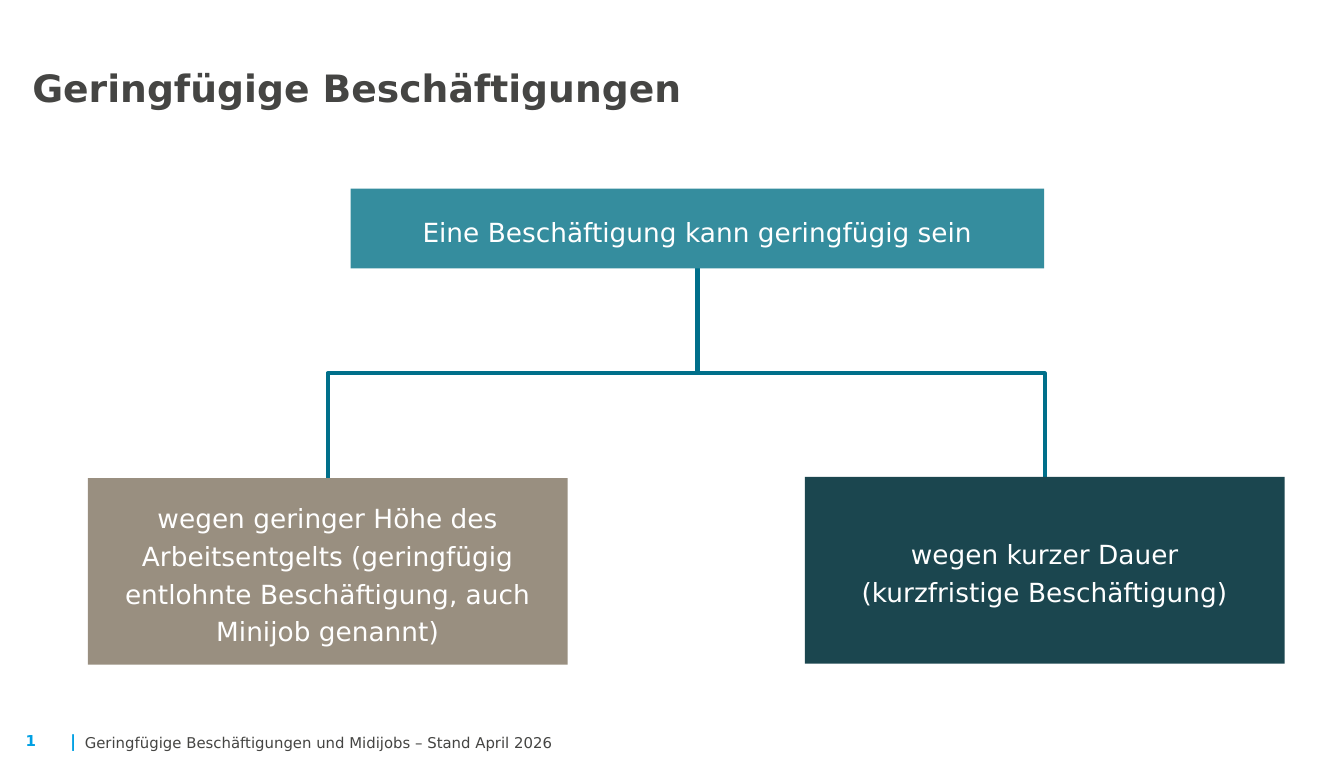
from lxml import etree
from pptx import Presentation
from pptx.dml.color import RGBColor
from pptx.enum.shapes import MSO_CONNECTOR, MSO_SHAPE
from pptx.enum.text import MSO_ANCHOR, MSO_AUTO_SIZE, PP_ALIGN
from pptx.oxml.ns import qn
from pptx.util import Pt

ELBOW, RECTANGLE = MSO_CONNECTOR.ELBOW, MSO_SHAPE.RECTANGLE
TOP, MIDDLE, BOTTOM = MSO_ANCHOR.TOP, MSO_ANCHOR.MIDDLE, MSO_ANCHOR.BOTTOM
LEFT, CENTER = PP_ALIGN.LEFT, PP_ALIGN.CENTER
NO_FIT = MSO_AUTO_SIZE.NONE

THEME = {
    "font": "DejaVu Sans",
    "text": "454543", "accent": "00A0E3", "white": "FFFFFF", "branch": "006F8A",
    "root": "358D9E", "pay": "998F80", "duration": "1B464F",
    "title_size": 20, "box_size": 14, "divider_size": 8.9,
    "page_size": 8, "footer_size": 7.9,
}

presentation = Presentation()
presentation.slide_width, presentation.slide_height = Pt(714.38), Pt(405)
slide = presentation.slides.add_slide(presentation.slide_layouts[5])


def area(left, top, width, height):
    """Turn percentages of the slide's size into lengths."""
    across, down = presentation.slide_width / 100, presentation.slide_height / 100
    return [round(share) for share in
            (left * across, top * down, width * across, height * down)]


def write(shape, text, size, color, bold=False, align=LEFT, spacing=None, **frame_format):
    frame = shape.text_frame
    frame.text = text
    for name, value in {"auto_size": NO_FIT, **frame_format}.items():
        setattr(frame, name, value)
    paragraph = frame.paragraphs[0]
    paragraph.alignment, paragraph.line_spacing = align, spacing
    for run in paragraph.runs:
        font = run.font
        font.name, font.size, font.bold = THEME["font"], Pt(THEME[size]), bold
        font.color.rgb = RGBColor.from_string(THEME[color])


FLUSH = dict.fromkeys(("margin_left", "margin_top", "margin_right", "margin_bottom"), 0)

# Title
title = slide.shapes.title
title.left, title.top, title.width, title.height = area(2.4, 8, 85.79, 12.62)
write(title, "Geringfügige Beschäftigungen", "title_size", "text", bold=True,
      spacing=Pt(24.8), vertical_anchor=TOP, word_wrap=True,
      **{**FLUSH, "margin_top": Pt(1.5)})

# Footer
footer_parts = [
    ((5.22, 95.9, 0.6, 2.67), "|", "divider_size", "accent",
     {"bold": True, "word_wrap": False, "vertical_anchor": BOTTOM, **FLUSH}),
    ((6.31, 95.9, 91.33, 2.67),
     "Geringfügige Beschäftigungen und Midijobs – Stand April 2026",
     "footer_size", "text",
     {"word_wrap": True, "vertical_anchor": BOTTOM, **FLUSH}),
    ((0.91, 95.11, 2.82, 4.27), "1", "page_size", "accent",
     {"bold": True, "word_wrap": False}),
]
for place, text, size, color, text_format in footer_parts:
    write(slide.shapes.add_textbox(*area(*place)), text, size, color, **text_format)

# Tree boxes: the root first, then its two branches
tree = [
    ("root", (26.1, 24.76, 51.6, 10.45), "Eine Beschäftigung kann geringfügig sein"),
    ("pay", (6.53, 62.75, 35.7, 24.5),
     "wegen geringer Höhe des Arbeitsentgelts (geringfügig entlohnte "
     "Beschäftigung, auch Minijob genannt)"),
    ("duration", (59.88, 62.6, 35.7, 24.5),
     "wegen kurzer Dauer\v(kurzfristige Beschäftigung)"),
]
boxes = []
for fill, place, text in tree:
    box = slide.shapes.add_shape(RECTANGLE, *area(*place))
    box.shadow.inherit = False
    box.fill.solid()
    box.fill.fore_color.rgb = RGBColor.from_string(THEME[fill])
    box.line.fill.background()
    write(box, text, "box_size", "white", align=CENTER, spacing=1.2,
          vertical_anchor=MIDDLE, word_wrap=True)
    boxes.append(box)

# Elbows behind the boxes share one crossbar; each is laid out sideways and turned
root, *branches = boxes
start_x, start_y = root.left + root.width // 2, root.top + root.height
end_y = max(branch.top for branch in branches)
middle_y, half_drop = (start_y + end_y) // 2, (end_y - start_y) // 2
for branch in branches:
    end_x = branch.left + branch.width // 2
    middle_x, half_reach = (start_x + end_x) // 2, abs(end_x - start_x) // 2
    side, degrees = (-1, 270) if end_x > start_x else (1, 90)
    elbow = slide.shapes.add_connector(
        ELBOW, middle_x - side * half_drop, middle_y - half_reach,
        middle_x + side * half_drop, middle_y + half_reach)
    elbow.line.color.rgb = RGBColor.from_string(THEME["branch"])
    elbow.line.width = Pt(2.25)
    properties = elbow._element.spPr
    properties.find(qn("a:xfrm")).set("rot", str(degrees * 60000))
    etree.SubElement(properties, qn("a:effectLst"))
    root._element.addprevious(elbow._element)

presentation.save("out.pptx")
